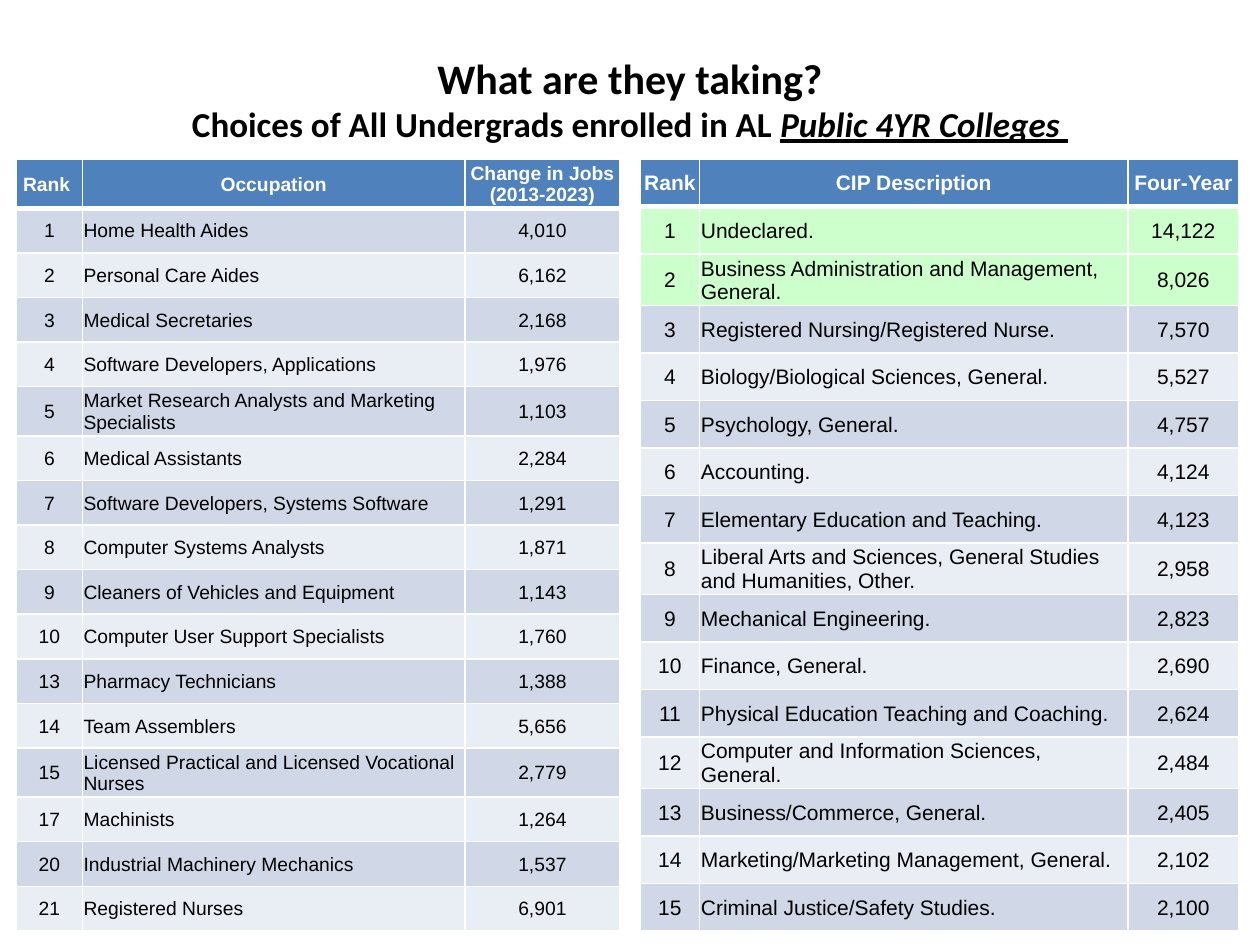
from lxml import etree
from pptx import Presentation
from pptx.dml.color import RGBColor
from pptx.enum.text import MSO_ANCHOR, PP_ALIGN
from pptx.oxml.ns import qn
from pptx.util import Pt

MIDDLE = MSO_ANCHOR.MIDDLE
CENTER = PP_ALIGN.CENTER
LEFT = PP_ALIGN.LEFT

WHITE = "FFFFFF"
BLACK = "000000"
HEADER_BLUE = "4F81BD"
HIGHLIGHT_GREEN = "CCFFCC"
STRIPES = ("D0D8E8", "E9EDF4")

TABLE_TOP = 90.9

OCCUPATIONS = [
    ("Rank ", "Occupation", "Change in Jobs (2013-2023)"),
    ("1", "Home Health Aides", "4,010"),
    ("2", "Personal Care Aides", "6,162"),
    ("3", "Medical Secretaries", "2,168"),
    ("4", "Software Developers, Applications", "1,976"),
    ("5", "Market Research Analysts and Marketing Specialists", "1,103"),
    ("6", "Medical Assistants", "2,284"),
    ("7", "Software Developers, Systems Software", "1,291"),
    ("8", "Computer Systems Analysts", "1,871"),
    ("9", "Cleaners of Vehicles and Equipment", "1,143"),
    ("10", "Computer User Support Specialists", "1,760"),
    ("13", "Pharmacy Technicians", "1,388"),
    ("14", "Team Assemblers", "5,656"),
    ("15", "Licensed Practical and Licensed Vocational Nurses", "2,779"),
    ("17", "Machinists", "1,264"),
    ("20", "Industrial Machinery Mechanics", "1,537"),
    ("21", "Registered Nurses", "6,901"),
]

PROGRAMS = [
    ("Rank", "CIP Description", "Four-Year"),
    ("1", "Undeclared.", "14,122"),
    ("2", "Business Administration and Management, General.", "8,026"),
    ("3", "Registered Nursing/Registered Nurse.", "7,570"),
    ("4", "Biology/Biological Sciences, General.", "5,527"),
    ("5", "Psychology, General.", "4,757"),
    ("6", "Accounting.", "4,124"),
    ("7", "Elementary Education and Teaching.", "4,123"),
    ("8", "Liberal Arts and Sciences, General Studies and Humanities, Other.", "2,958"),
    ("9", "Mechanical Engineering.", "2,823"),
    ("10", "Finance, General.", "2,690"),
    ("11", "Physical Education Teaching and Coaching.", "2,624"),
    ("12", "Computer and Information Sciences, General.", "2,484"),
    ("13", "Business/Commerce, General.", "2,405"),
    ("14", "Marketing/Marketing Management, General.", "2,102"),
    ("15", "Criminal Justice/Safety Studies.", "2,100"),
]


def color(hex_value):
    return RGBColor.from_string(hex_value)


def add_run(paragraph, text, size, font, hex_value, bold=False, emphasis=False):
    """Emphasis is italic with an underline."""
    run = paragraph.add_run()
    run.text = text
    run.font.name = font
    run.font.size = Pt(size)
    run.font.bold = bold
    run.font.color.rgb = color(hex_value)
    if emphasis:
        run.font.italic = True
        run.font.underline = True


def add_title(slide):
    box = slide.shapes.add_textbox(Pt(36), Pt(21.6), Pt(648), Pt(69.1))
    frame = box.text_frame
    frame.word_wrap = True
    frame.vertical_anchor = MIDDLE
    paragraph = frame.paragraphs[0]
    paragraph.alignment = CENTER
    add_run(paragraph, "What are they taking?", 24, "Calibri", BLACK, True)
    paragraph.add_line_break()
    add_run(paragraph, "Choices of All Undergrads enrolled in AL ", 20, "Calibri", BLACK, True)
    add_run(paragraph, "Public 4YR Colleges ", 20, "Calibri", BLACK, True, emphasis=True)


def set_borders(cell, top, bottom):
    """White borders, 1 pt at the sides; call before the fill is set."""
    properties = cell._tc.get_or_add_tcPr()
    for side, width in (("L", 1), ("R", 1), ("T", top), ("B", bottom)):
        line = etree.SubElement(properties, qn(f"a:ln{side}"), w=str(Pt(width)))
        fill = etree.SubElement(line, qn("a:solidFill"))
        etree.SubElement(fill, qn("a:srgbClr"), val=WHITE)


def fill_cell(cell, text, size, alignment, fill, is_header):
    cell.margin_left = cell.margin_right = cell.margin_top = Pt(0.75)
    cell.margin_bottom = Pt(0)
    cell.vertical_anchor = MIDDLE
    cell.fill.solid()
    cell.fill.fore_color.rgb = color(fill)
    paragraph = cell.text_frame.paragraphs[0]
    paragraph.alignment = alignment
    add_run(paragraph, text, size, "Arial", WHITE if is_header else BLACK, is_header)


def row_fill(row, highlighted):
    if row == 0:
        return HEADER_BLUE
    if row <= highlighted:
        return HIGHLIGHT_GREEN
    return STRIPES[(row - 1) % 2]


def add_ranking(slide, records, left, widths, size, heights, tall_rows, highlighted=0):
    """heights holds the one-line and two-line row heights; the top ranks are highlighted."""
    row_heights = [heights[row in tall_rows] for row in range(len(records))]
    table = slide.shapes.add_table(
        len(records), len(widths), Pt(left), Pt(TABLE_TOP),
        Pt(sum(widths)), Pt(sum(row_heights))).table
    table.horz_banding = False
    for column, width in zip(table.columns, widths):
        column.width = Pt(width)
    for row, record in enumerate(records):
        table.rows[row].height = Pt(row_heights[row])
        for column, text in enumerate(record):
            cell = table.cell(row, column)
            set_borders(cell, 3 if row == 1 else 1, 3 if row == 0 else 1)
            alignment = LEFT if row and column == 1 else CENTER
            fill_cell(cell, text, size, alignment, row_fill(row, highlighted), row == 0)


def main():
    presentation = Presentation()
    presentation.slide_width = Pt(720)
    presentation.slide_height = Pt(540)
    slide = presentation.slides.add_slide(presentation.slide_layouts[6])
    add_title(slide)
    add_ranking(slide, OCCUPATIONS, 9.4, (37.6, 218.8, 88.4), 11,
                (25.5, 28.1), {0, 5, 13})
    add_ranking(slide, PROGRAMS, 365.8, (34, 244.8, 63.2), 12,
                (27.1, 29.4), {2, 8, 12}, highlighted=2)
    presentation.save("out.pptx")


if __name__ == "__main__":
    main()
